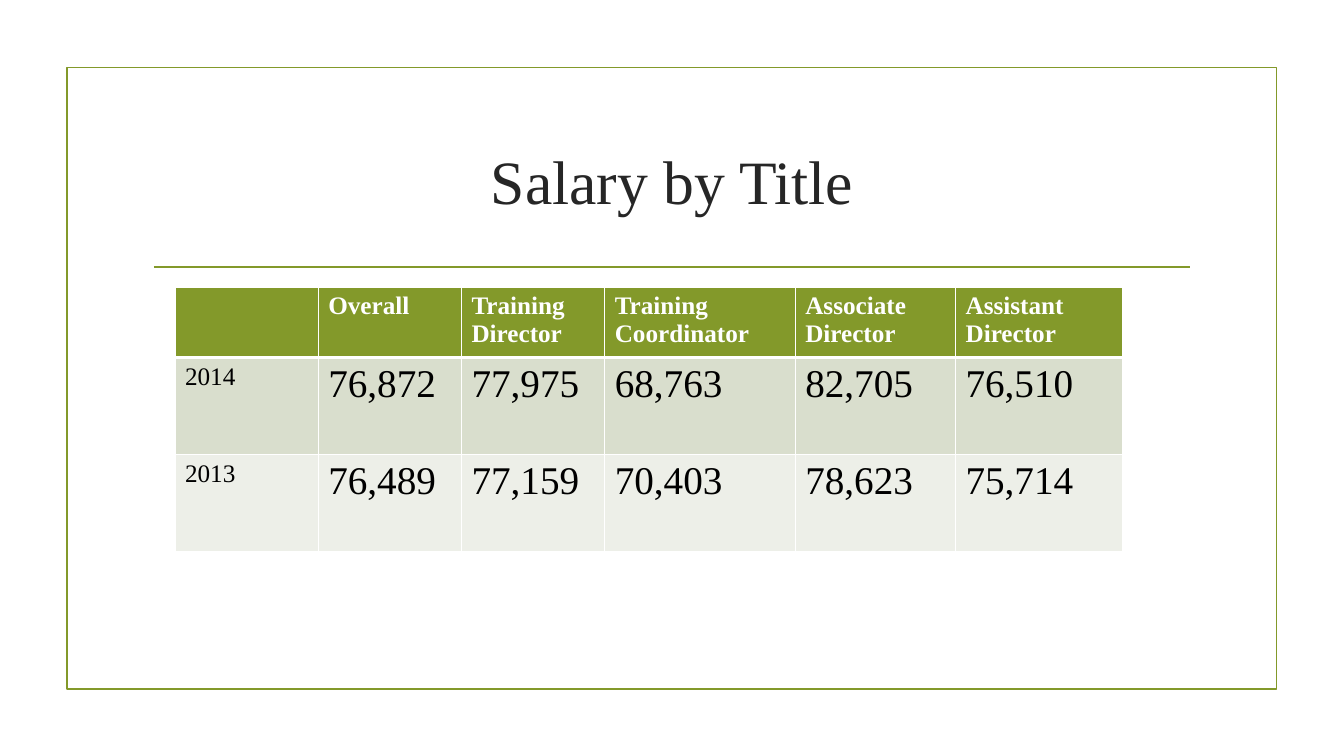
from dataclasses import dataclass

import pptx
import pptx.dml.color
import pptx.enum.shapes
import pptx.enum.text
import pptx.oxml
import pptx.oxml.ns
import pptx.util

Cm = pptx.util.Cm
Pt = pptx.util.Pt


@dataclass(frozen=True)
class Theme:
    font: str = "Times New Roman"
    accent: str = "83992A"
    title: str = "262626"
    header_text: str = "FFFFFF"
    body_text: str = "000000"
    border: str = "FFFFFF"
    bands: tuple = ("D9DECD", "EDEFE8")
    title_size: int = 44
    label_size: int = 18
    value_size: int = 28
    rule_width: float = 1.25
    grid_width: int = 1
    header_rule_width: int = 3


THEME = Theme()

SALARIES = [
    ["", "Overall", "Training Director", "Training Coordinator",
     "Associate Director", "Assistant Director"],
    ["2014", "76,872", "77,975", "68,763", "82,705", "76,510"],
    ["2013", "76,489", "77,159", "70,403", "78,623", "75,714"],
]
COLUMN_WIDTHS = [3.61, 3.61, 3.61, 4.8, 4.04, 4.22]
ROW_HEIGHTS = [1.63, 2.45, 2.45]


def rgb(value):
    return pptx.dml.color.RGBColor.from_string(value)


def write(paragraph, text, size, color, bold=False):
    run = paragraph.add_run()
    run.text = text
    settings = {"name": THEME.font, "size": Pt(size), "bold": bold}
    for attribute, value in settings.items():
        setattr(run.font, attribute, value)
    run.font.color.rgb = rgb(color)


def style_rule(line):
    line.color.rgb = rgb(THEME.accent)
    line.width = Pt(THEME.rule_width)


def add_frame(slide, left, top, width, height):
    """Draw the outlined frame and the rule under the title inside it."""
    frame = slide.shapes.add_shape(
        pptx.enum.shapes.MSO_SHAPE.RECTANGLE,
        Cm(left), Cm(top), Cm(width), Cm(height))
    frame.shadow.inherit = False
    frame.fill.background()
    style_rule(frame.line)

    inset, drop = 2.19, 5.03
    title_rule = slide.shapes.add_connector(
        pptx.enum.shapes.MSO_CONNECTOR.STRAIGHT,
        Cm(left + inset), Cm(top + drop),
        Cm(left + width - inset), Cm(top + drop))
    style_rule(title_rule.line)
    title_rule._element.spPr.append(
        pptx.oxml.parse_xml(
            f'<a:effectLst {pptx.oxml.ns.nsdecls("a")}/>'))


def add_title(slide, text, left, top, width, height):
    title = slide.shapes.add_textbox(
        Cm(left), Cm(top), Cm(width), Cm(height)).text_frame
    title.word_wrap = True
    title.vertical_anchor = pptx.enum.text.MSO_ANCHOR.MIDDLE
    heading = title.paragraphs[0]
    heading.alignment = pptx.enum.text.PP_ALIGN.CENTER
    write(heading, text, THEME.title_size, THEME.title)


def set_borders(cell, top, bottom):
    """Border a cell, with the top and bottom widths given in points."""
    widths = {"lnL": THEME.grid_width, "lnR": THEME.grid_width,
              "lnT": top, "lnB": bottom}
    properties = cell._tc.get_or_add_tcPr()
    for position, (side, width) in enumerate(widths.items()):
        properties.insert(position, pptx.oxml.parse_xml(
            f'<a:{side} {pptx.oxml.ns.nsdecls("a")} w="{Pt(width)}">'
            f'<a:solidFill><a:srgbClr val="{THEME.border}"/></a:solidFill>'
            f'</a:{side}>'))


def add_salary_table(slide, left, top):
    table = slide.shapes.add_table(
        len(SALARIES), len(COLUMN_WIDTHS), Cm(left), Cm(top),
        Cm(sum(COLUMN_WIDTHS)), Cm(sum(ROW_HEIGHTS))).table
    for column, width in zip(table.columns, COLUMN_WIDTHS):
        column.width = Cm(width)
    for row, height in zip(table.rows, ROW_HEIGHTS):
        row.height = Cm(height)

    fills = (THEME.accent, *THEME.bands)
    edges = (THEME.grid_width, THEME.header_rule_width,
             THEME.grid_width, THEME.grid_width)
    for r, entries in enumerate(SALARIES):
        header = r == 0
        color = THEME.header_text if header else THEME.body_text
        for c, entry in enumerate(entries):
            cell = table.cell(r, c)
            cell.fill.solid()
            cell.fill.fore_color.rgb = rgb(fills[r])
            set_borders(cell, edges[r], edges[r + 1])
            if entry:
                size = THEME.label_size if header or c == 0 else THEME.value_size
                write(cell.text_frame.paragraphs[0], entry, size, color, header)


def main():
    deck = pptx.Presentation()
    deck.slide_width, deck.slide_height = Cm(33.87), Cm(19.05)
    slide = deck.slides.add_slide(deck.slide_layouts[6])
    add_frame(slide, 1.69, 1.7, 30.48, 15.67)
    add_title(slide, "Salary by Title", 3.61, 2.72, 26.67, 3.63)
    add_salary_table(slide, 4.41, 7.23)
    deck.save("out.pptx")


if __name__ == "__main__":
    main()
